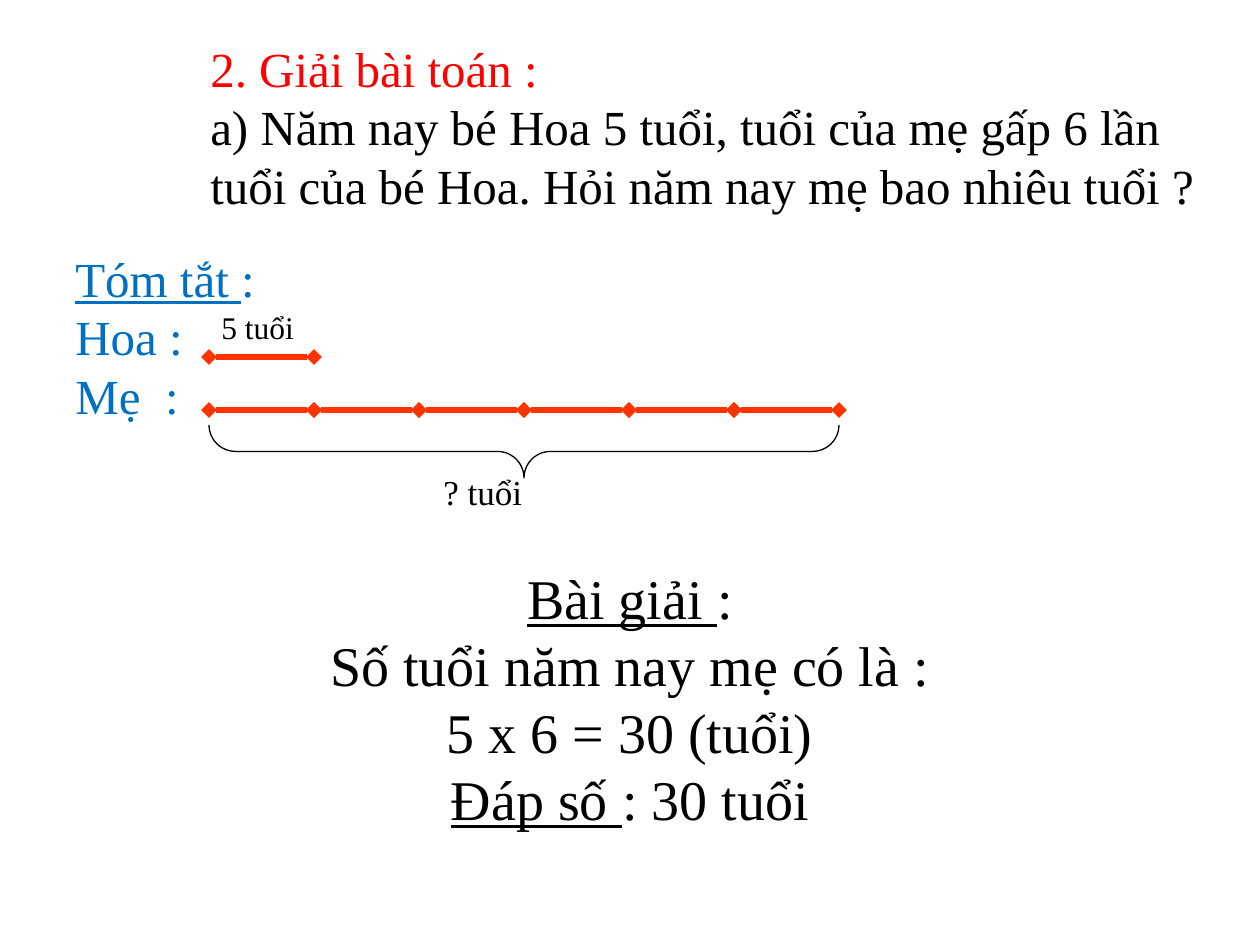
from lxml import etree
from pptx import Presentation
from pptx.dml.color import RGBColor
from pptx.enum.shapes import MSO_CONNECTOR, MSO_SHAPE
from pptx.enum.text import MSO_AUTO_SIZE, PP_ALIGN
from pptx.oxml.ns import qn
from pptx.util import Emu, Pt

LEFT, CENTER = PP_ALIGN.LEFT, PP_ALIGN.CENTER
STRAIGHT = MSO_CONNECTOR.STRAIGHT
RIGHT_BRACE = MSO_SHAPE.RIGHT_BRACE
FIT_SHAPE = MSO_AUTO_SIZE.SHAPE_TO_FIT_TEXT

RED = RGBColor(0xFF, 0x00, 0x00)
ORANGE = RGBColor(0xFF, 0x33, 0x00)
BLUE = RGBColor(0x00, 0x70, 0xC0)
BLACK = RGBColor(0x00, 0x00, 0x00)

FONT = "Times New Roman"
BAR_LEFT = 209
UNIT = 105
MOTHER_UNITS = 6


def px(n):
    return Emu(round(n * 914400 / 126))


def add_run(p, text, size, color, underline=False):
    r = p.add_run()
    r.text = text
    r.font.name = FONT
    r.font.size = Pt(size)
    r.font.color.rgb = color
    if underline:
        r.font.underline = True


def add_text(slide, box, paragraphs, size=28, color=BLACK, align=LEFT):
    tf = slide.shapes.add_textbox(*map(px, box)).text_frame
    tf.word_wrap = True
    tf.auto_size = FIT_SHAPE
    for i, (heading, body, *own_color) in enumerate(paragraphs):
        p = tf.add_paragraph() if i else tf.paragraphs[0]
        p.alignment = align
        run_color = own_color[0] if own_color else color
        if heading:
            add_run(p, heading, size, run_color, underline=True)
        add_run(p, body, size, run_color)


def add_bar(slide, y, units):
    for i in range(units):
        x = BAR_LEFT + i * UNIT
        line = slide.shapes.add_connector(
            STRAIGHT, px(x), px(y), px(x + UNIT), px(y))
        line.line.color.rgb = ORANGE
        line.line.width = Pt(3)
        ln = line.line._get_or_add_ln()
        for end in ("a:headEnd", "a:tailEnd"):
            etree.SubElement(ln, qn(end), type="diamond")
        etree.SubElement(line._element.spPr, qn("a:effectLst"))


def add_brace(slide, top, depth, length):
    left = BAR_LEFT + (length - depth) / 2
    sp = slide.shapes.add_shape(
        RIGHT_BRACE, px(left), px(top - (length - depth) / 2),
        px(depth), px(length))
    sp.rotation = 90
    sp.adjustments[0] = 0.5
    sp.adjustments[1] = 0.5
    sp.shadow.inherit = False
    sp.fill.background()
    sp.line.color.rgb = BLACK
    sp.line.width = Pt(0.75)


def main():
    prs = Presentation()
    prs.slide_width, prs.slide_height = px(1260), px(945)
    slide = prs.slides.add_slide(prs.slide_layouts[6])

    add_text(slide, (198, 32, 1018, 190), [
        ("", "2. Giải bài toán :", RED),
        ("", "a) Năm nay bé Hoa 5 tuổi, tuổi của mẹ gấp 6 lần "
             "tuổi của bé Hoa. Hỏi năm nay mẹ bao nhiêu tuổi ?"),
    ])
    add_text(slide, (151, 557, 958, 285), [
        ("Bài giải ", ":"),
        ("", "Số tuổi năm nay mẹ có là :"),
        ("", "5 x 6 = 30 (tuổi)"),
        ("Đáp số ", ": 30 tuổi"),
    ], size=32, align=CENTER)
    add_text(slide, (63, 242, 1092, 190), [
        ("Tóm tắt ", ":"),
        ("", "Hoa :"),
        ("", "Mẹ  :"),
    ], color=BLUE)

    add_bar(slide, 357, 1)
    add_bar(slide, 410, MOTHER_UNITS)
    add_text(slide, (209, 302, 126, 50), [("", "5 tuổi")], size=18)
    add_brace(slide, 425, 53, MOTHER_UNITS * UNIT)
    add_text(slide, (431, 464, 220, 55), [("", "? tuổi")], size=20)

    prs.save("out.pptx")


if __name__ == "__main__":
    main()
